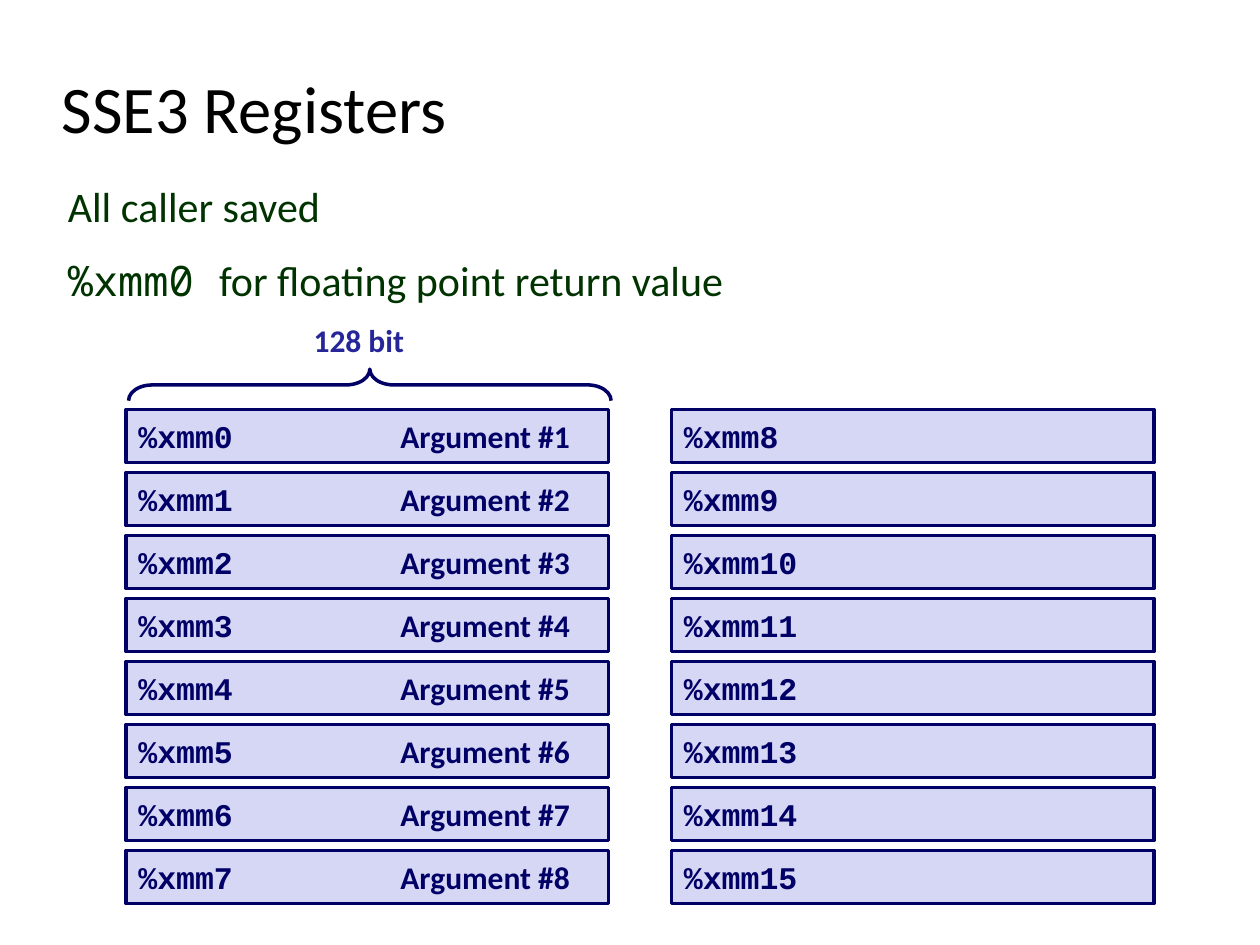
"""Build the SSE3 registers slide."""
from pptx import Presentation
from pptx.dml.color import RGBColor
from pptx.enum.shapes import MSO_SHAPE
from pptx.enum.text import MSO_ANCHOR, MSO_AUTO_SIZE, PP_ALIGN
from pptx.util import Inches, Pt

RECTANGLE, LEFT_BRACE = MSO_SHAPE.RECTANGLE, MSO_SHAPE.LEFT_BRACE
MIDDLE, LEFT = MSO_ANCHOR.MIDDLE, PP_ALIGN.LEFT
GROW = MSO_AUTO_SIZE.SHAPE_TO_FIT_TEXT
COLORS = {
    "title": "000000",
    "body": "003300",
    "navy": "000066",
    "register": "D6D6F5",
    "width": "262699",
}
ROWS, ROW_PITCH, TOP = 8, 0.5, 3.25
COLUMN_LEFTS = (1, 5.33)
REGISTER_WIDTH, REGISTER_HEIGHT = 3.83, 0.42


def style(paragraph, font_name, size, color, bold=False):
    paragraph.alignment = LEFT
    font = paragraph.font
    font.name, font.size, font.bold = font_name, Pt(size), bold
    font.color.rgb = RGBColor.from_string(COLORS[color])


def add_label(text, left, top, width, color):
    label = slide.shapes.add_textbox(
        Inches(left), Inches(top), Inches(width), Inches(0.4))
    frame = label.text_frame
    frame.word_wrap = False
    frame.auto_size = GROW
    frame.text = text
    style(frame.paragraphs[0], "Calibri", 18, color, bold=True)


prs = Presentation()
prs.slide_width, prs.slide_height = Inches(10), Inches(7.5)
slide = prs.slides.add_slide(prs.slide_layouts[6])
navy = RGBColor.from_string(COLORS["navy"])

title = slide.shapes.add_textbox(
    Inches(0.39), Inches(0.48), Inches(8.3), Inches(0.83)).text_frame
title.word_wrap = True
title.vertical_anchor = MIDDLE
title.text = "SSE3 Registers"
title.paragraphs[0].line_spacing = 0.87
style(title.paragraphs[0], "Calibri", 38, "title")

body = slide.shapes.add_textbox(
    Inches(0.43), Inches(1.41), Inches(8.64), Inches(1.07)).text_frame
body.word_wrap = True
caller_saved, return_value = body.paragraphs[0], body.add_paragraph()
caller_saved.text = "All caller saved"
for text, font_name in (("%xmm0 ", "Noto Sans Mono"),
                        ("for floating point return value", "Calibri")):
    run = return_value.add_run()
    run.text = text
    run.font.name = font_name
for paragraph in (caller_saved, return_value):
    style(paragraph, "Calibri", 24, "body")
    paragraph.line_spacing = 0.95
    paragraph.space_before = Pt(15)
    properties = paragraph._p.get_or_add_pPr()
    properties.set("marL", str(Inches(0.42)))
    properties.set("indent", str(Inches(-0.41)))

for number in range(ROWS * len(COLUMN_LEFTS)):
    column, row = divmod(number, ROWS)
    register = slide.shapes.add_shape(
        RECTANGLE, Inches(COLUMN_LEFTS[column]), Inches(TOP + row * ROW_PITCH),
        Inches(REGISTER_WIDTH), Inches(REGISTER_HEIGHT))
    register.shadow.inherit = False
    register.fill.solid()
    register.fill.fore_color.rgb = RGBColor.from_string(COLORS["register"])
    register.line.color.rgb = navy
    register.line.width = Pt(2)
    frame = register.text_frame
    frame.word_wrap = False
    frame.vertical_anchor = MIDDLE
    frame.text = f"%xmm{number}"
    style(frame.paragraphs[0], "Courier New", 18, "navy", bold=True)

for row in range(ROWS):
    add_label(f"Argument #{row + 1}", 3.08, TOP + 0.01 + row * ROW_PITCH, 2.07, "navy")

brace = slide.shapes.add_shape(
    LEFT_BRACE, Inches(2.81), Inches(1.14), Inches(0.25), Inches(REGISTER_WIDTH))
brace.rotation = 90
brace.adjustments[0] = 0.75
brace.shadow.inherit = False
brace.fill.background()
brace.line.color.rgb = navy
brace.line.width = Pt(2)
add_label("128 bit", 2.39, 2.5, 1.19, "width")

prs.save("out.pptx")
